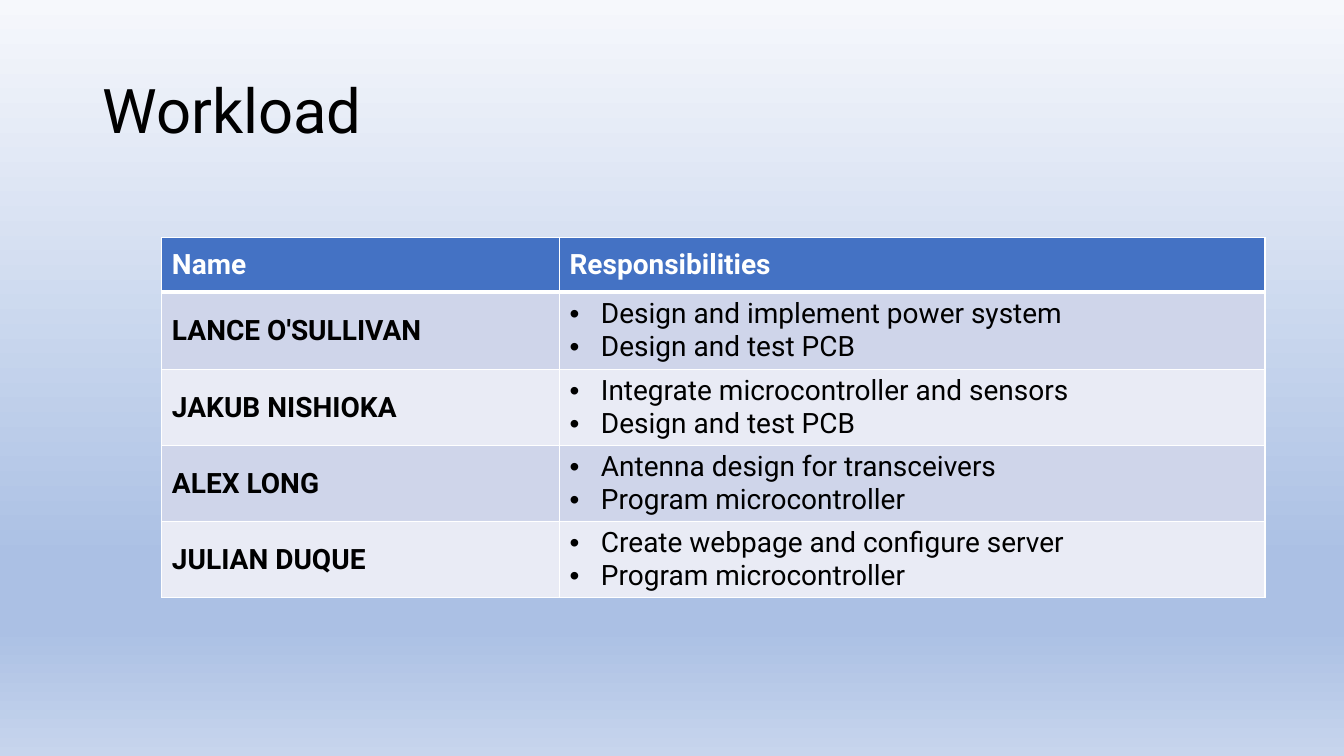
from copy import deepcopy

from lxml.etree import SubElement
from pptx import Presentation
from pptx.dml.color import RGBColor
from pptx.enum.text import MSO_ANCHOR as Anchor
from pptx.oxml.ns import qn
from pptx.util import Cm, Pt

BLACK = RGBColor(0x00, 0x00, 0x00)
WHITE = RGBColor(0xFF, 0xFF, 0xFF)
BLUE = RGBColor(0x44, 0x72, 0xC4)
BANDS = (RGBColor(0xCF, 0xD5, 0xEA), RGBColor(0xE9, 0xEB, 0xF5))
SKY = (
    (0, RGBColor(0xF6, 0xF8, 0xFC)),
    (74, RGBColor(0xAB, 0xC0, 0xE4)),
    (83, RGBColor(0xAB, 0xC0, 0xE4)),
    (100, RGBColor(0xC7, 0xD5, 0xED)),
)

HEADS = ("Name", "Responsibilities")
TEAM = (
    ("LANCE O'SULLIVAN", ("Design and implement power system", "Design and test PCB")),
    ("JAKUB NISHIOKA", ("Integrate microcontroller and sensors", "Design and test PCB")),
    ("ALEX LONG", ("Antenna design for transceivers", "Program microcontroller")),
    ("JULIAN DUQUE", ("Create webpage and configure server", "Program microcontroller")),
)


class Deck:
    face = "Roboto"
    indent = Cm(0.79)

    def __init__(self):
        self.file = Presentation()
        self.file.slide_width = Cm(33.87)
        self.file.slide_height = Cm(19.05)
        self.slide = self.file.slides.add_slide(self.file.slide_layouts[5])

    def font(self, para, size, color, bold=False):
        font = para.font
        font.name, font.size, font.bold = self.face, Pt(size), bold
        font.color.rgb = color

    def back(self, stops):
        fill = self.slide.background.fill
        fill.gradient()
        fill.gradient_angle = 270
        # Widen the default pair of stops to the full list
        group = self.slide.element.find(".//" + qn("a:gsLst"))
        base = deepcopy(group[0])
        group[:] = [deepcopy(base) for _ in stops]
        for stop, (place, color) in zip(fill.gradient_stops, stops):
            stop.position = place / 100
            stop.color.rgb = color

    def title(self, text, left, top, width, height):
        shape = self.slide.shapes.title
        shape.left, shape.top = Cm(left), Cm(top)
        shape.width, shape.height = Cm(width), Cm(height)
        frame = shape.text_frame
        frame.text = text
        frame.word_wrap = True
        frame.vertical_anchor = Anchor.MIDDLE
        para = frame.paragraphs[0]
        para.line_spacing = 0.9
        # The theme centres titles
        para._p.get_or_add_pPr().set("algn", "l")
        self.font(para, 44, BLACK)

    def table(self, left, top, cols, rows):
        frame = self.slide.shapes.add_table(
            len(rows), len(cols), Cm(left), Cm(top), Cm(sum(cols)), Cm(sum(rows)))
        table = frame.table
        for col, width in zip(table.columns, cols):
            col.width = Cm(width)
        for row, height in zip(table.rows, rows):
            row.height = Cm(height)
        return table

    def cell(self, cell, lines, fill, color=BLACK, bold=False, dots=False, top=1, base=1):
        cell.vertical_anchor = Anchor.MIDDLE
        cell.text = "\n".join(lines)
        for para in cell.text_frame.paragraphs:
            self.font(para, 20, color, bold)
            if dots:
                self.bullet(para)
        # Borders must come before the fill
        props = cell._tc.get_or_add_tcPr()
        for side, width in (("L", 1), ("R", 1), ("T", top), ("B", base)):
            line = SubElement(props, qn("a:ln" + side), w=str(Pt(width)))
            solid = SubElement(line, qn("a:solidFill"))
            SubElement(solid, qn("a:srgbClr"), val=str(WHITE))
        cell.fill.solid()
        cell.fill.fore_color.rgb = fill

    def bullet(self, para):
        props = para._p.get_or_add_pPr()
        props.set("marL", str(self.indent))
        props.set("indent", str(-self.indent))
        mark = SubElement(props, qn("a:buChar"), char="•")
        font = SubElement(props, qn("a:buFont"), typeface="Arial")
        # Schema order: bullet font, bullet, then text defaults
        props.insert(0, font)
        props.insert(1, mark)


def main():
    deck = Deck()
    deck.back(SKY)
    deck.title("Workload", 2.33, 1.01, 29.21, 3.68)

    # Header row
    table = deck.table(4.08, 5.99, (10.02, 17.78), (1.37, 1.95, 1.86, 1.86, 1.86))
    for col, head in enumerate(HEADS):
        deck.cell(table.cell(0, col), [head], BLUE, WHITE, bold=True, base=3)

    # One banded row per person
    for row, (name, tasks) in enumerate(TEAM, 1):
        fill = BANDS[(row - 1) % 2]
        top = 3 if row == 1 else 1
        deck.cell(table.cell(row, 0), [name], fill, bold=True, top=top)
        deck.cell(table.cell(row, 1), tasks, fill, dots=True, top=top)

    deck.file.save("out.pptx")


if __name__ == "__main__":
    main()
